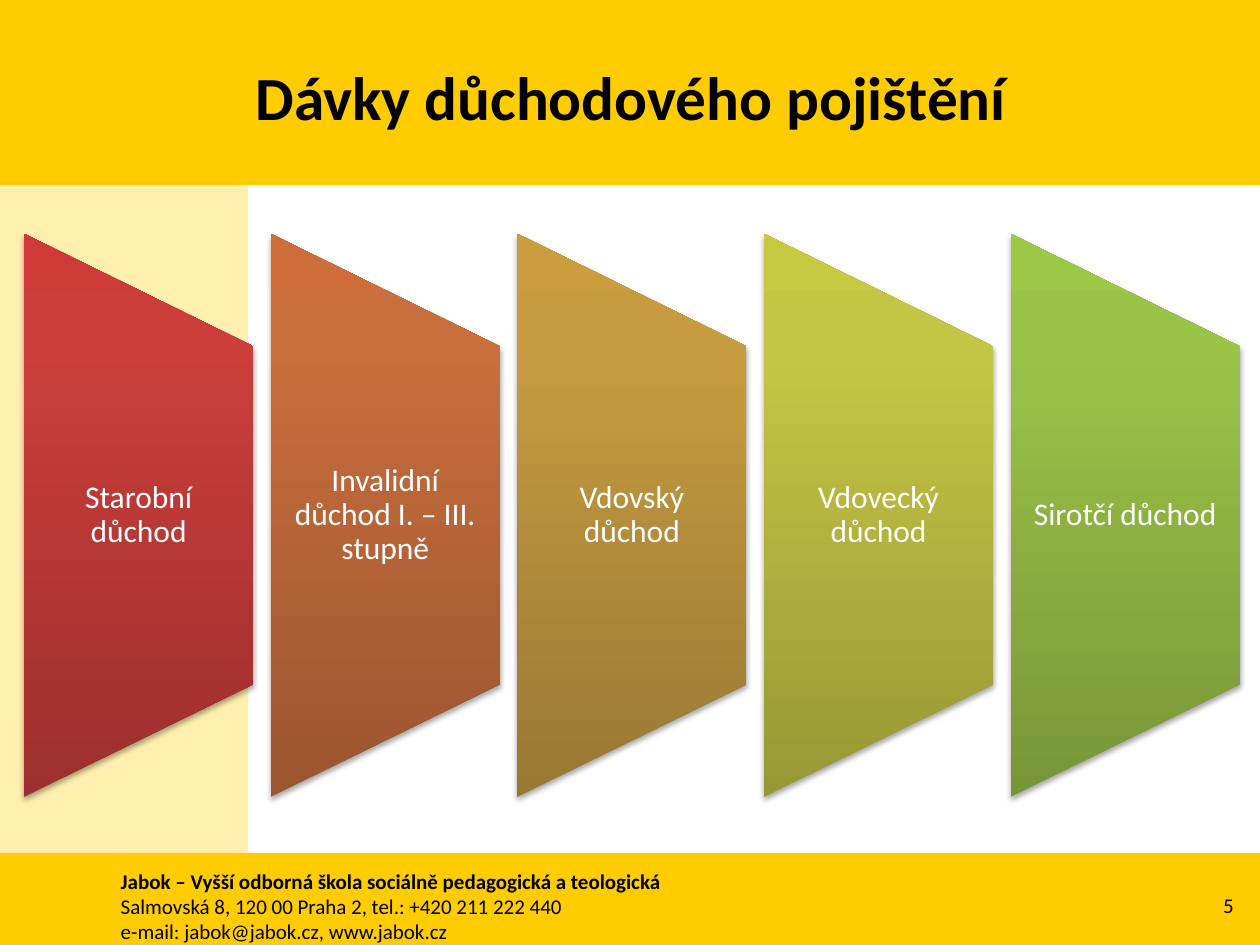
from pptx import Presentation
from pptx.dml.color import RGBColor
from pptx.enum.shapes import MSO_SHAPE as Preset
from pptx.enum.text import MSO_ANCHOR as Anchor, MSO_AUTO_SIZE as AutoSize, PP_ALIGN as Align
from pptx.oxml import parse_xml
from pptx.oxml.ns import nsdecls, qn
from pptx.util import Inches, Pt

COLORS = {"band": "FFCC00", "side": "FFF0AF", "dark": "000000", "light": "FFFFFF"}
FONT = "Calibri"

# Label and gradient stops (0, 80, 100 %) of each pension panel
PENSIONS = [
    ("Starobní důchod", ("9C2F2D", "CB3E3A", "CE3B37")),
    ("Invalidní důchod I. – III. stupně", ("9B552F", "C96E3D", "CD6E3B")),
    ("Vdovský důchod", ("997832", "C79C41", "CB9D3F")),
    ("Vdovecký důchod", ("989835", "C5C545", "C8C942")),
    ("Sirotčí důchod", ("779737", "9BC348", "9DC746")),
]
FOOTER = [
    "Jabok – Vyšší odborná škola sociálně pedagogická a teologická",
    "Salmovská 8, 120 00 Praha 2, tel.: +420 211 222 440",
    "e-mail: jabok@jabok.cz, www.jabok.cz",
]

# Panel grid in inches
FIRST_LEFT, LAST_LEFT = 0.19, 8.02
PANEL_WIDTH, PANEL_HEIGHT, PANEL_MIDDLE = 1.82, 4.47, 4.09
LABEL_HEIGHT = 2.68


def add_band(page, left, top, width, height, color):
    band = page.shapes.add_shape(
        Preset.RECTANGLE, Inches(left), Inches(top), Inches(width), Inches(height))
    band.shadow.inherit = False
    band.fill.solid()
    band.fill.fore_color.rgb = RGBColor.from_string(COLORS[color])
    band.line.fill.background()


def add_text(page, place, lines, size, color="dark", align=Align.LEFT,
             anchor=Anchor.MIDDLE, bold_first=False):
    box = page.shapes.add_textbox(*map(Inches, place))
    frame = box.text_frame
    frame.word_wrap = True
    frame.vertical_anchor = anchor
    for index, line in enumerate(lines):
        para = frame.paragraphs[0] if index == 0 else frame.add_paragraph()
        para.text = line
        para.alignment = align
        para.font.name = FONT
        para.font.size = Pt(size)
        para.font.bold = bold_first and index == 0
        para.font.color.rgb = RGBColor.from_string(COLORS[color])
    return frame


def set_gradient(shape, colors):
    """Upright three-stop gradient, dark at the bottom, unaffected by rotation."""
    stops = "".join(
        f'<a:gs pos="{position * 1000}"><a:srgbClr val="{color}"/></a:gs>'
        for position, color in zip((0, 80, 100), colors))
    shape.fill.background()
    properties = shape._element.spPr
    properties.replace(properties.find(qn("a:noFill")), parse_xml(
        f'<a:gradFill {nsdecls("a")} rotWithShape="0"><a:gsLst>{stops}</a:gsLst>'
        '<a:lin ang="16200000" scaled="0"/></a:gradFill>'))


def set_shadow(shape):
    shape.shadow.inherit = False
    effects = shape._element.spPr.find(qn("a:effectLst"))
    effects.append(parse_xml(
        f'<a:outerShdw {nsdecls("a")} blurRad="{Pt(3.1)}" dist="{Pt(1.8)}" '
        'dir="5400000" rotWithShape="0"><a:srgbClr val="000000">'
        '<a:alpha val="35000"/></a:srgbClr></a:outerShdw>'))


def add_panel(page, left, label, colors):
    # The shape lies on its side, so its length becomes the panel height
    center = left + PANEL_WIDTH / 2
    panel = page.shapes.add_shape(
        Preset.FLOWCHART_MANUAL_OPERATION,
        Inches(center - PANEL_HEIGHT / 2), Inches(PANEL_MIDDLE - PANEL_WIDTH / 2),
        Inches(PANEL_HEIGHT), Inches(PANEL_WIDTH))
    panel.rotation = 270
    set_gradient(panel, colors)
    panel.line.fill.background()
    set_shadow(panel)

    place = (left, PANEL_MIDDLE - LABEL_HEIGHT / 2, PANEL_WIDTH, LABEL_HEIGHT)
    frame = add_text(page, place, [label], 18, "light", Align.CENTER)
    frame.margin_left = frame.margin_right = Inches(0.12)
    frame.margin_top = frame.margin_bottom = 0
    frame.paragraphs[0].line_spacing = 0.9


def main():
    deck = Presentation()
    deck.slide_width, deck.slide_height = Inches(10), Inches(7.5)
    page = deck.slides.add_slide(deck.slide_layouts[6])

    # Background bands
    add_band(page, 0, 0, 10, 1.47, "band")
    add_band(page, 0, 1.47, 1.97, 6.03, "side")
    add_band(page, 0, 6.77, 10, 0.76, "band")

    # Footer, page number and title
    footer = add_text(page, (0.86, 6.84, 8.19, 0.71), FOOTER, 12,
                      anchor=Anchor.TOP, bold_first=True)
    footer.auto_size = AutoSize.SHAPE_TO_FIT_TEXT
    add_text(page, (9.26, 6.98, 0.63, 0.4), ["5"], 12, align=Align.RIGHT)
    add_text(page, (0.51, 0.14, 9, 1.25), ["Dávky důchodového pojištění"], 35,
             align=Align.CENTER, bold_first=True)

    # Pension panels
    pitch = (LAST_LEFT - FIRST_LEFT) / (len(PENSIONS) - 1)
    for index, (label, colors) in enumerate(PENSIONS):
        add_panel(page, FIRST_LEFT + index * pitch, label, colors)

    deck.save("out.pptx")


if __name__ == "__main__":
    main()
